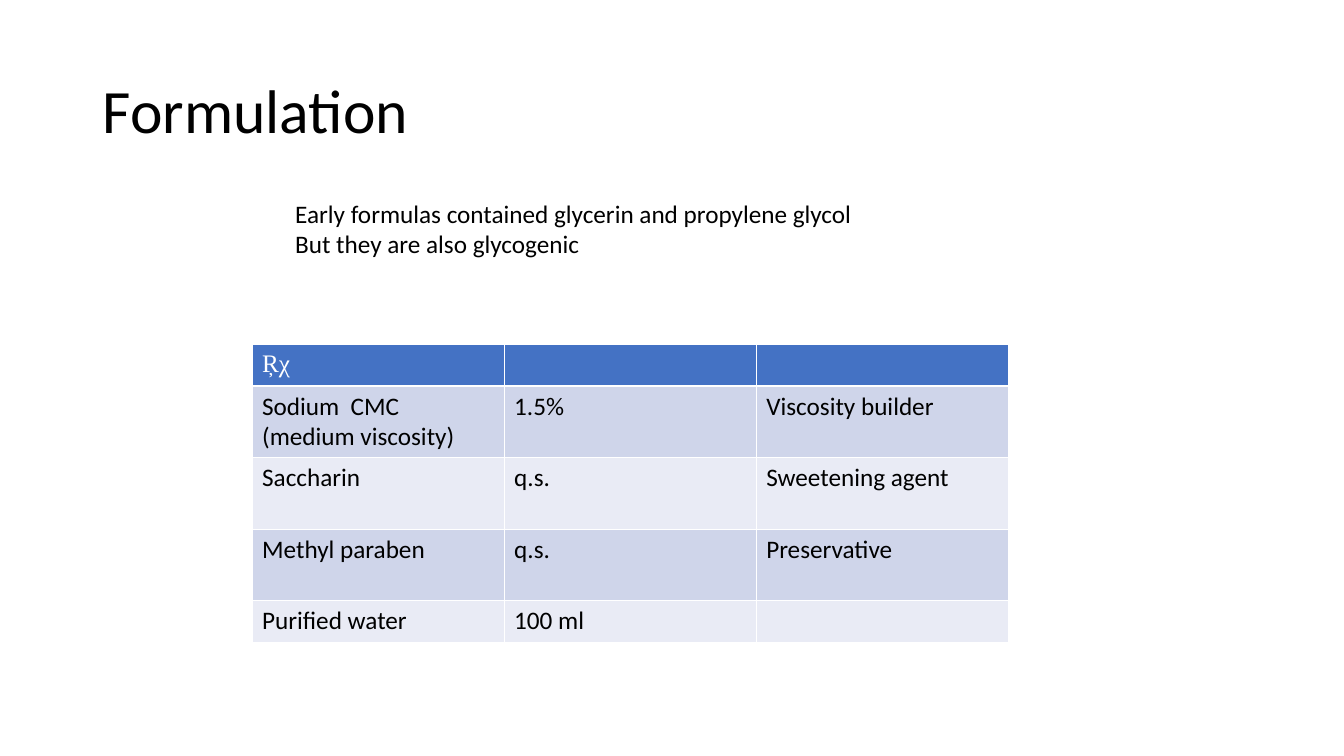
from dataclasses import dataclass

from pptx import Presentation
from pptx.dml.color import RGBColor
from pptx.enum.text import MSO_ANCHOR, MSO_AUTO_SIZE, PP_ALIGN
from pptx.slide import Slide
from pptx.table import Table
from pptx.text.text import TextFrame
from pptx.util import Inches, Pt

BLACK = RGBColor(0x00, 0x00, 0x00)
WHITE = RGBColor(0xFF, 0xFF, 0xFF)
BLUE = RGBColor(0x44, 0x72, 0xC4)
DARK = RGBColor(0xCF, 0xD5, 0xEA)
LIGHT = RGBColor(0xE9, 0xEB, 0xF5)


@dataclass
class Row:
    cells: tuple[str, str, str]
    height: float


HEAD = Row(("Ŗχ", "", ""), 0.41)
ITEMS = [
    Row(("Sodium  CMC (medium viscosity)", "1.5%", "Viscosity builder"), 0.71),
    Row(("Saccharin", "q.s.", "Sweetening agent"), 0.71),
    Row(("Methyl paraben", "q.s.", "Preservative"), 0.71),
    Row(("Purified water", "100 ml", ""), 0.41),
]
NOTES = [
    "Early formulas contained glycerin and propylene glycol",
    "But they are also glycogenic",
]


def write(frame: TextFrame, text: str, *, size: int = 18, font: str = "Calibri",
          color: RGBColor = BLACK, spacing: float = 1.0) -> None:
    """Fill a text frame, one paragraph per line of text."""
    frame.text = text
    for para in frame.paragraphs:
        para.alignment = PP_ALIGN.LEFT
        para.line_spacing = spacing
        para.font.size = Pt(size)
        para.font.name = font
        para.font.bold = False
        para.font.color.rgb = color


def add_title(slide: Slide) -> None:
    title = slide.shapes.title
    title.left, title.top = Inches(0.92), Inches(0.4)
    title.width, title.height = Inches(11.5), Inches(1.45)
    title.text_frame.vertical_anchor = MSO_ANCHOR.MIDDLE
    write(title.text_frame, "Formulation", size=44, spacing=0.9)


def add_notes(slide: Slide) -> None:
    box = slide.shapes.add_textbox(Inches(2.83), Inches(1.92), Inches(7.5), Inches(0.71))
    box.text_frame.word_wrap = True
    box.text_frame.auto_size = MSO_AUTO_SIZE.SHAPE_TO_FIT_TEXT
    write(box.text_frame, "\n".join(NOTES))


def fill_row(table: Table, index: int, row: Row, fill: RGBColor, *,
             font: str = "Calibri", color: RGBColor = BLACK) -> None:
    table.rows[index].height = Inches(row.height)
    for cell, text in zip(table.rows[index].cells, row.cells):
        cell.fill.solid()
        cell.fill.fore_color.rgb = fill
        write(cell.text_frame, text, font=font, color=color)


def add_recipe(slide: Slide) -> None:
    rows = [HEAD, *ITEMS]
    height = sum(row.height for row in rows)
    frame = slide.shapes.add_table(len(rows), len(HEAD.cells), Inches(2.5),
                                   Inches(3.42), Inches(7.5), Inches(height))
    table = frame.table
    fill_row(table, 0, HEAD, BLUE, font="Times New Roman", color=WHITE)
    for index, row in enumerate(ITEMS, start=1):
        fill_row(table, index, row, DARK if index % 2 else LIGHT)


def main() -> None:
    deck = Presentation()
    deck.slide_width, deck.slide_height = Inches(13.33), Inches(7.5)
    slide = deck.slides.add_slide(deck.slide_layouts[5])  # title only
    add_title(slide)
    add_recipe(slide)
    add_notes(slide)
    deck.save("out.pptx")


if __name__ == "__main__":
    main()
